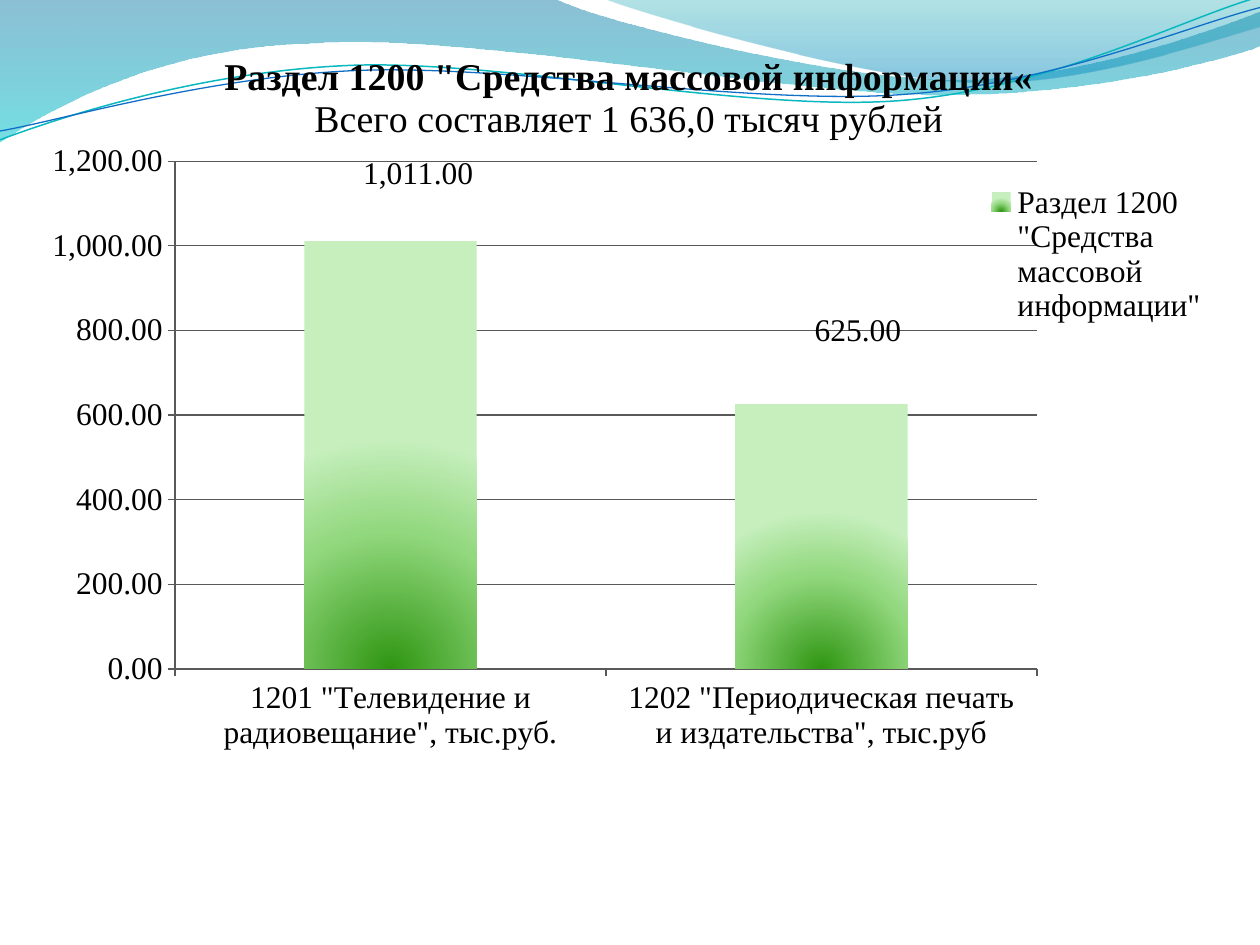
from dataclasses import dataclass

from pptx import Presentation
from pptx.chart.data import CategoryChartData
from pptx.dml.color import RGBColor
from pptx.enum.chart import XL_CHART_TYPE, XL_LABEL_POSITION, XL_LEGEND_POSITION, XL_TICK_MARK
from pptx.oxml import parse_xml
from pptx.oxml.ns import nsdecls, qn
from pptx.util import Inches, Pt


@dataclass(frozen=True)
class Theme:
    """Colours, font and type sizes of the slide."""
    font: str = "Times New Roman"
    title_size: float = 21.6
    text_size: float = 18
    text: str = "000000"
    axis: str = "595959"
    teal: str = "0AB8BF"
    blue: str = "0F6FC6"
    wide_wave: tuple = ((0, "0074A1", 45), (100, "00C6CF", 55))
    right_wave: tuple = ((0, "00A1A9", 30), (80, "008BBF", 45))
    bar: tuple = ((0, "2F9612", 100), (60, "92D87E", 100), (100, "C6EFBD", 100))


THEME = Theme()
DOWNWARD = '<a:lin ang="5400000" scaled="0"/>'
FROM_BOTTOM = '<a:path path="circle"><a:fillToRect l="50000" t="100000" r="50000"/></a:path>'

WIDE_WAVE = ((0, 0), [
    [(4.4, -0.01)],
    [(4.76, 0.17), (6.64, 0.63), (7.58, 0.63)],
    [(8.53, 0.63), (9.58, 0.26), (10, 0.09)],
    [(10.01, 0.36)],
    [(9.83, 0.44), (8.7, 0.76), (7.46, 0.75)],
    [(6.22, 0.75), (3.82, 0.28), (2.57, 0.34)],
    [(1.29, 0.36), (0.46, 0.83), (-0.01, 1.13)],
])
RIGHT_WAVE = ((4.79, -0.01), [
    [(5.09, 0.11), (6.82, 0.62), (7.69, 0.65)],
    [(8.56, 0.69), (9.61, 0.32), (10, 0.21)],
    [(10, 0)],
])
TEAL_LINE = ((0, 1.11), [
    [(0.48, 0.93), (1.58, 0.57), (2.77, 0.52)],
    [(3.95, 0.47), (5.93, 0.89), (7.13, 0.8)],
    [(8.33, 0.71), (9.38, 0.15), (9.98, -0.02)],
])
BLUE_LINE = ((0, 1.04), [
    [(0.47, 0.96), (1.64, 0.61), (2.83, 0.56)],
    [(4.03, 0.51), (5.97, 0.84), (7.17, 0.75)],
    [(8.36, 0.67), (9.41, 0.21), (10, 0.06)],
])


def set_gradient(fill, properties, stops, direction):
    """Fill with gradient stops given as position, colour and opacity."""
    fill.solid()
    stop_xml = "".join(
        f'<a:gs pos="{position * 1000}"><a:srgbClr val="{color}">'
        f'<a:alpha val="{opacity * 1000}"/></a:srgbClr></a:gs>'
        for position, color, opacity in stops)
    gradient = parse_xml(f'<a:gradFill {nsdecls("a")} rotWithShape="1">'
                         f'<a:gsLst>{stop_xml}</a:gsLst>{direction}</a:gradFill>')
    properties.replace(properties.find(qn("a:solidFill")), gradient)


def add_curve(slide, box, outline, close):
    """Draw an outline of straight and cubic segments from the box corner."""
    start, segments = outline
    corners = [start] + [corner for segment in segments for corner in segment]
    points = [(box[0] + Inches(x), box[1] + Inches(y)) for x, y in corners]
    builder = slide.shapes.build_freeform(*points[0])
    builder.add_line_segments(points[1:], close=close)
    curve = builder.convert_to_shape()
    curve.shadow.inherit = False
    steps = iter(list(curve._element.iter(qn("a:lnTo"))))
    for segment in segments:
        group = [next(steps) for _ in segment]
        if len(group) == 3:
            cubic = parse_xml(f'<a:cubicBezTo {nsdecls("a")}/>')
            group[0].addprevious(cubic)
            for step in group:
                cubic.append(step[0])
                step.getparent().remove(step)
    return curve


def add_waves(slide, box):
    """Draw the translucent waves and thin lines of the header."""
    for outline, stops in ((WIDE_WAVE, THEME.wide_wave), (RIGHT_WAVE, THEME.right_wave)):
        wave = add_curve(slide, box, outline, True)
        set_gradient(wave.fill, wave._element.spPr, stops, DOWNWARD)
        wave.line.fill.background()
    for outline, color, width in ((TEAL_LINE, THEME.teal, 0.85), (BLUE_LINE, THEME.blue, 0.75)):
        thread = add_curve(slide, box, outline, False)
        thread.fill.background()
        thread.line.color.rgb = RGBColor.from_string(color)
        thread.line.width = Pt(width)


def set_layout(parent, index, box, x, y, size=None, target="", edge=True):
    """Place a chart part by lengths in inches within the chart box."""
    for old in parent.findall(qn("c:layout")):
        parent.remove(old)
    width, height = box[2:]
    modes = '<c:xMode val="edge"/><c:yMode val="edge"/>' if edge else ""
    extent = (f'<c:w val="{Inches(size[0]) / width}"/><c:h val="{Inches(size[1]) / height}"/>'
              if size else "")
    parent.insert(index, parse_xml(
        f'<c:layout {nsdecls("c")}><c:manualLayout>{target}{modes}'
        f'<c:x val="{Inches(x) / width}"/><c:y val="{Inches(y) / height}"/>{extent}'
        f'</c:manualLayout></c:layout>'))


def style_font(font, size=THEME.text_size, bold=False):
    """Apply the theme's type to a font."""
    font.name = THEME.font
    font.size = Pt(size)
    font.bold = bold
    font.color.rgb = RGBColor.from_string(THEME.text)


def style_line(line):
    """Apply the thin axis line."""
    line.color.rgb = RGBColor.from_string(THEME.axis)
    line.width = Pt(0.75)


def add_title(chart, box):
    """Write the two-line chart title."""
    frame = chart.chart_title.text_frame
    frame.text = 'Раздел 1200 "Средства массовой информации«\nВсего составляет 1 636,0 тысяч рублей'
    for paragraph, bold in zip(frame.paragraphs, (True, False)):
        style_font(paragraph.runs[0].font, THEME.title_size, bold)
    chart.chart_title.include_in_layout = False
    set_layout(chart.chart_title._element, 1, box, 1.47, 0.19)


def add_labels(section, box):
    """Show the amounts above the columns."""
    labels = section.data_labels
    labels.show_value = True
    labels.number_format = "#,##0.00"
    labels.number_format_is_linked = False
    for leader in labels._element.findall(qn("c:showLeaderLines")):
        leader.set("val", "0")
    for index, offset in enumerate(((0.22, -0.36), (0.29, -0.41))):
        label = section.points[index].data_label
        style_font(label.font)
        label.position = XL_LABEL_POSITION.OUTSIDE_END
        set_layout(labels._element.findall(qn("c:dLbl"))[index], 1, box, *offset, edge=False)


def add_media_chart(slide, box):
    """Add the column chart of media spending."""
    spending = CategoryChartData(number_format="#,##0.00")
    spending.categories = ['1201 "Телевидение и радиовещание", тыс.руб.',
                           '1202 "Периодическая печать и издательства", тыс.руб']
    spending.add_series('Раздел 1200 "Средства массовой информации"', (1011, 625))
    chart = slide.shapes.add_chart(XL_CHART_TYPE.COLUMN_CLUSTERED, *box, spending).chart
    style_font(chart.font)
    add_title(chart, box)
    set_layout(chart._chartSpace.chart.plotArea, 0, box, 1.11, 1.07, (6.84, 4.03),
               '<c:layoutTarget val="inner"/>')

    chart.has_legend = True
    chart.legend.position = XL_LEGEND_POSITION.RIGHT
    chart.legend.include_in_layout = False
    style_font(chart.legend.font)
    set_layout(chart.legend._element, 1, box, 7.52, 1.25, (1.8, 1.12))

    for axis in (chart.category_axis, chart.value_axis):
        axis.major_tick_mark = XL_TICK_MARK.OUTSIDE
        style_font(axis.tick_labels.font)
        style_line(axis.format.line)
    amounts = chart.value_axis
    amounts.minimum_scale, amounts.maximum_scale, amounts.major_unit = 0, 1200, 200
    amounts.tick_labels.number_format = "#,##0.00"
    amounts.tick_labels.number_format_is_linked = False
    style_line(amounts.major_gridlines.format.line)

    plot = chart.plots[0]
    plot.gap_width = 150
    plot.vary_by_categories = False
    section = plot.series[0]
    set_gradient(section.format.fill, section._element.get_or_add_spPr(), THEME.bar, FROM_BOTTOM)
    add_labels(section, box)


def main():
    """Build and save the slide."""
    deck = Presentation()
    deck.slide_width, deck.slide_height = Inches(10), Inches(7.5)
    slide = deck.slides.add_slide(deck.slide_layouts[6])
    add_waves(slide, (Inches(0), Inches(0), Inches(10), Inches(1.13)))
    add_media_chart(slide, (Inches(0.28), Inches(0.21), Inches(9.45), Inches(7.01)))
    deck.save("out.pptx")


if __name__ == "__main__":
    main()
